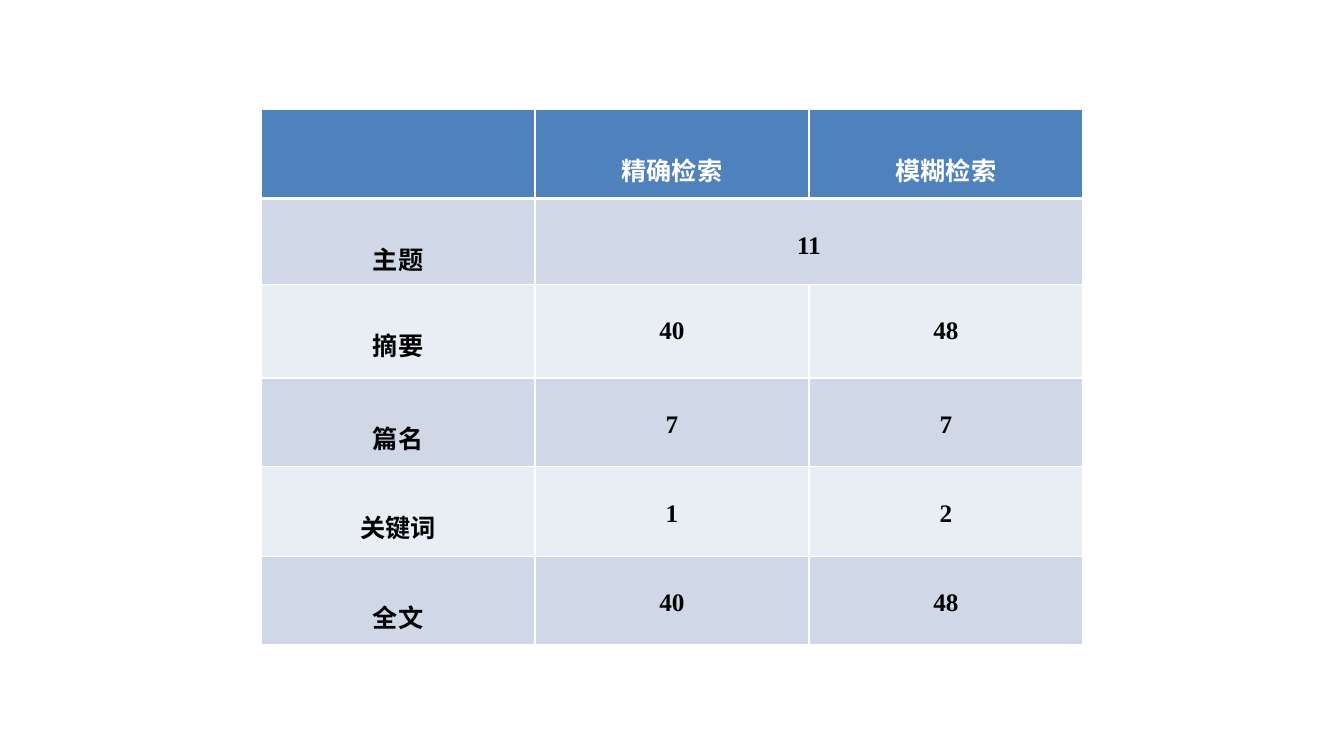
from pptx import Presentation
from pptx.dml.color import RGBColor
from pptx.enum.text import MSO_ANCHOR, PP_ALIGN
from pptx.oxml import parse_xml
from pptx.oxml.ns import nsdecls
from pptx.util import Inches, Pt

CENTER = PP_ALIGN.CENTER
TOP = MSO_ANCHOR.TOP

SEARCH_RESULTS = [
    ["", "精确检索", "模糊检索"],
    ["主题", "11", ""],
    ["摘要", "40", "48"],
    ["篇名", "7", "7"],
    ["关键词", "1", "2"],
    ["全文", "40", "48"],
]
ROW_HEIGHTS = [0.88, 0.85, 0.93, 0.88, 0.89, 0.88]


def color(value):
    return RGBColor.from_string(value)


class SlideBuilder:
    font = "Times New Roman"
    size = 18
    header_fill = "4F81BD"
    band_fills = ["E9EDF4", "D0D8E8"]
    border = "FFFFFF"

    def __init__(self, slide):
        self.slide = slide

    def borders(self, cell, row):
        widths = {"L": 1, "R": 1, "T": 3 if row == 1 else 1, "B": 3 if row == 0 else 1}
        properties = cell._tc.get_or_add_tcPr()
        for side, width in widths.items():
            properties.append(parse_xml(
                f'<a:ln{side} {nsdecls("a")} w="{Pt(width)}"><a:solidFill>'
                f'<a:srgbClr val="{self.border}"/></a:solidFill></a:ln{side}>'
            ))

    def cell(self, cell, text, row):
        self.borders(cell, row)
        cell.fill.solid()
        cell.fill.fore_color.rgb = color(self.band_fills[row % 2] if row else self.header_fill)
        cell.vertical_anchor = TOP
        paragraph = cell.text_frame.paragraphs[0]
        paragraph.alignment = CENTER
        paragraph.line_spacing = 2.0
        if text:
            run = paragraph.add_run()
            run.text = text
            run.font.name = self.font
            run.font.size = Pt(self.size)
            run.font.bold = True
            run.font.color.rgb = color("000000" if row else "FFFFFF")

    def table(self, values, left, top, width, heights):
        table = self.slide.shapes.add_table(
            len(values), len(values[0]), Inches(left), Inches(top),
            Inches(width), Inches(sum(heights)),
        ).table
        for table_row, height in zip(table.rows, heights):
            table_row.height = Inches(height)
        for row, texts in enumerate(values):
            for column, text in enumerate(texts):
                self.cell(table.cell(row, column), text, row)
        return table


def main():
    presentation = Presentation()
    presentation.slide_width = Inches(13.33)
    presentation.slide_height = Inches(7.5)
    builder = SlideBuilder(presentation.slides.add_slide(presentation.slide_layouts[6]))
    results = builder.table(SEARCH_RESULTS, 2.59, 1.09, 8.15, ROW_HEIGHTS)
    results.cell(1, 1).merge(results.cell(1, 2))
    presentation.save("out.pptx")


if __name__ == "__main__":
    main()
